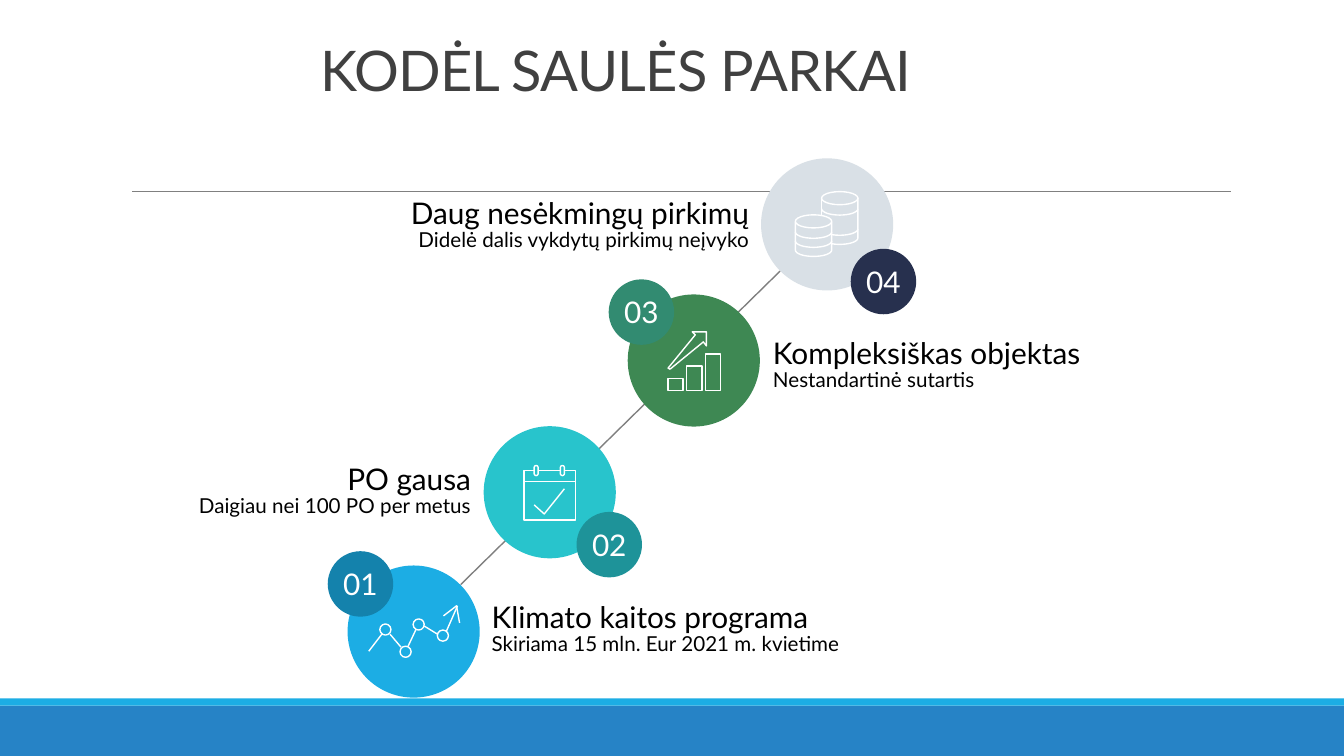
from dataclasses import dataclass
from math import cos, radians, sin

from lxml.etree import SubElement
from pptx import Presentation
from pptx.dml.color import RGBColor
from pptx.enum.shapes import MSO_CONNECTOR, MSO_SHAPE
from pptx.enum.text import MSO_ANCHOR, MSO_AUTO_SIZE, PP_ALIGN
from pptx.oxml.ns import qn
from pptx.shapes.autoshape import Shape
from pptx.shapes.connector import Connector
from pptx.slide import Slide
from pptx.text.text import _Paragraph
from pptx.util import Cm, Pt

Point = tuple[float, float]


@dataclass(frozen=True)
class Theme:
    font: str = "Lato"
    title: str = "404040"
    text: str = "000000"
    white: str = "FFFFFF"
    rule: str = "808080"
    footer: str = "2683C6"
    footer_edge: str = "1CADE4"
    title_size: float = 40
    head_size: float = 21.3
    detail_size: float = 14.7
    line_spacing: float = 0.85


@dataclass(frozen=True)
class Stroke:
    points: list[Point]
    closed: bool = False


@dataclass(frozen=True)
class Figure:
    kind: MSO_SHAPE
    x: float
    y: float
    w: float
    h: float


@dataclass(frozen=True)
class Step:
    number: str
    head: str
    detail: str
    disc: Point
    disc_color: str
    badge: Point
    badge_color: str
    caption: Point
    caption_width: float
    align: PP_ALIGN
    icon: list[Stroke | Figure]


THEME = Theme()
DISC = 3.33
BADGE = 1.65
CAPTION_HEIGHT = 1.57
UNIT = DISC / 131  # icons are laid out on a 131 x 131 grid over the disc


def arc(cx: float, cy: float, end: float = 180) -> list[Point]:
    """Lower edge of a coin, from its right end round to the end angle."""
    angles = [radians(end * i / 16) for i in range(17)]
    return [(cx + 18 * cos(a), cy + 6.3 * sin(a)) for a in angles]


TREND_ICON = [
    Stroke([(111, 57), (108, 40), (95, 50)]),
    Stroke([(34, 68), (21, 85)]),
    Stroke([(53, 81), (42, 68)]),
    Stroke([(68, 63), (60, 80)]),
    Stroke([(89, 68), (76, 60)]),
    Stroke([(109, 40), (98, 65)]),
    *(Figure(MSO_SHAPE.OVAL, x, y, 11, 11)
      for x, y in [(89, 64), (65, 53), (52, 80), (32, 58)]),
]
CALENDAR_ICON = [
    Stroke([(54, 44), (76, 44)]),
    Stroke([(81, 44), (91, 44), (91, 93), (40, 93), (40, 44), (50, 44)]),
    Stroke([(40, 55), (91, 55)]),
    *(Figure(MSO_SHAPE.ROUNDED_RECTANGLE, x, 39, 4, 10) for x in (50, 76)),
    Stroke([(50, 78), (60, 87), (80, 62)]),
]
GROWTH_ICON = [
    *(Figure(MSO_SHAPE.RECTANGLE, 40 + 18.5 * i, 83 - 12 * i, 15, 12 + 12 * i)
      for i in range(3)),
    Stroke([(78, 37), (64, 37), (67, 40), (40, 73), (42, 74), (75, 47), (78, 51)],
           closed=True),
]
COINS_ICON = [
    Figure(MSO_SHAPE.OVAL, 34, 56, 36, 13),
    Stroke([(70, 63), *arc(52, 91), (34, 63)]),
    *(Stroke(arc(52, y)) for y in (73, 82)),
    Figure(MSO_SHAPE.OVAL, 60, 33, 36, 13),
    Stroke([(60, 39), (60, 57)]),
    Stroke([(96, 39), *arc(78, 79, 116)]),
    Stroke(arc(78, 70, 116)),
    Stroke(arc(78, 50)),
]

STEPS = [
    Step("01", "Klimato kaitos programa", "Skiriama 15 mln. Eur 2021 m. kvietime",
         (8.76, 14.25), "1CADE4", (8.26, 13.89), "1482AC",
         (12.14, 15.11), 9.47, PP_ALIGN.LEFT, TREND_ICON),
    Step("02", "PO gausa", "Daigiau nei 100 PO per metus",
         (12.19, 10.74), "28C4CC", (14.53, 12.9), "1E9399",
         (4.09, 11.63), 8.03, PP_ALIGN.RIGHT, CALENDAR_ICON),
    Step("03", "Kompleksiškas objektas", "Nestandartinė sutartis",
         (15.82, 7.42), "3E8853", (15.34, 7.04), "328B71",
         (19.23, 8.46), 10.39, PP_ALIGN.LEFT, GROWTH_ICON),
    Step("04", "Daug nesėkmingų pirkimų", "Didelė dalis vykdytų pirkimų neįvyko",
         (19.18, 3.99), "D9E0E6", (21.44, 6.27), "27304E",
         (8.56, 4.93), 10.57, PP_ALIGN.RIGHT, COINS_ICON),
]


def style_paragraph(p: _Paragraph, size: float, color: str, align: PP_ALIGN) -> None:
    p.alignment = align
    for r in p.runs:
        r.font.name = THEME.font
        r.font.size = Pt(size)
        r.font.color.rgb = RGBColor.from_string(color)


def add_filled(s: Slide, kind: MSO_SHAPE, at: Point, w: float, h: float,
               color: str) -> Shape:
    sp = s.shapes.add_shape(kind, Cm(at[0]), Cm(at[1]), Cm(w), Cm(h))
    sp.shadow.inherit = False
    sp.fill.solid()
    sp.fill.fore_color.rgb = RGBColor.from_string(color)
    sp.line.fill.background()
    return sp


def add_line(s: Slide, start: Point, end: Point, color: str, width: float) -> Connector:
    line = s.shapes.add_connector(MSO_CONNECTOR.STRAIGHT, Cm(start[0]), Cm(start[1]),
                                  Cm(end[0]), Cm(end[1]))
    line.line.color.rgb = RGBColor.from_string(color)
    line.line.width = Pt(width)
    SubElement(line._element.spPr, qn("a:effectLst"))
    return line


def add_icon(s: Slide, icon: list[Stroke | Figure], disc: Point) -> None:
    left, top = disc
    for part in icon:
        if isinstance(part, Figure):
            sp = s.shapes.add_shape(part.kind, Cm(left + part.x * UNIT),
                                    Cm(top + part.y * UNIT),
                                    Cm(part.w * UNIT), Cm(part.h * UNIT))
            if part.kind == MSO_SHAPE.ROUNDED_RECTANGLE:
                sp.adjustments[0] = 0.5
        elif len(part.points) == 2:
            start, end = [(left + x * UNIT, top + y * UNIT) for x, y in part.points]
            add_line(s, start, end, THEME.white, 1)
            continue
        else:
            points = [(Cm(x * UNIT), Cm(y * UNIT)) for x, y in part.points]
            builder = s.shapes.build_freeform(*points[0])
            builder.add_line_segments(points[1:], close=part.closed)
            sp = builder.convert_to_shape(Cm(left), Cm(top))
        sp.shadow.inherit = False
        sp.fill.background()
        sp.line.color.rgb = RGBColor.from_string(THEME.white)
        sp.line.width = Pt(1)


def add_badge(s: Slide, step: Step) -> None:
    sp = add_filled(s, MSO_SHAPE.OVAL, step.badge, BADGE, BADGE, step.badge_color)
    tf = sp.text_frame
    tf.text = step.number
    tf.word_wrap = False
    tf.vertical_anchor = MSO_ANCHOR.MIDDLE
    style_paragraph(tf.paragraphs[0], THEME.head_size, THEME.white, PP_ALIGN.CENTER)


def add_caption(s: Slide, step: Step) -> None:
    tf = s.shapes.add_textbox(Cm(step.caption[0]), Cm(step.caption[1]),
                              Cm(step.caption_width), Cm(CAPTION_HEIGHT)).text_frame
    tf.word_wrap = True
    tf.auto_size = MSO_AUTO_SIZE.SHAPE_TO_FIT_TEXT
    tf.text = f"{step.head}\n{step.detail}"
    for p, size in zip(tf.paragraphs, (THEME.head_size, THEME.detail_size)):
        p.line_spacing = THEME.line_spacing
        style_paragraph(p, size, THEME.text, step.align)


def set_title(s: Slide, text: str) -> None:
    title = s.shapes.title
    title.left, title.top, title.width, title.height = Cm(1.22), Cm(0.41), Cm(28.6), Cm(2.31)
    tf = title.text_frame
    tf.text = text
    tf.word_wrap = True
    tf.auto_size = MSO_AUTO_SIZE.NONE
    tf.vertical_anchor = MSO_ANCHOR.BOTTOM
    p = tf.paragraphs[0]
    p.line_spacing = THEME.line_spacing
    style_paragraph(p, THEME.title_size, THEME.title, PP_ALIGN.CENTER)
    p.runs[0]._r.get_or_add_rPr().set("spc", "-50")


def main() -> None:
    prs = Presentation()
    prs.slide_width, prs.slide_height = Cm(33.87), Cm(19.05)
    s = prs.slides.add_slide(prs.slide_layouts[5])
    set_title(s, "KODĖL SAULĖS PARKAI")
    add_line(s, (3.33, 4.83), (31.01, 4.83), THEME.rule, 0.5)
    add_filled(s, MSO_SHAPE.RECTANGLE, (0, 17.78), 33.87, 1.27, THEME.footer)
    add_filled(s, MSO_SHAPE.RECTANGLE, (0, 17.6), 33.87, 0.18, THEME.footer_edge)
    trail = add_line(s, (11.61, 14.73), (19.66, 6.83), THEME.text, 1)
    color = trail._element.spPr.find(".//" + qn("a:srgbClr"))
    SubElement(color, qn("a:alpha")).set("val", "50000")
    for step in STEPS:
        add_filled(s, MSO_SHAPE.OVAL, step.disc, DISC, DISC, step.disc_color)
        add_icon(s, step.icon, step.disc)
        add_badge(s, step)
        add_caption(s, step)
    prs.save("out.pptx")


if __name__ == "__main__":
    main()
